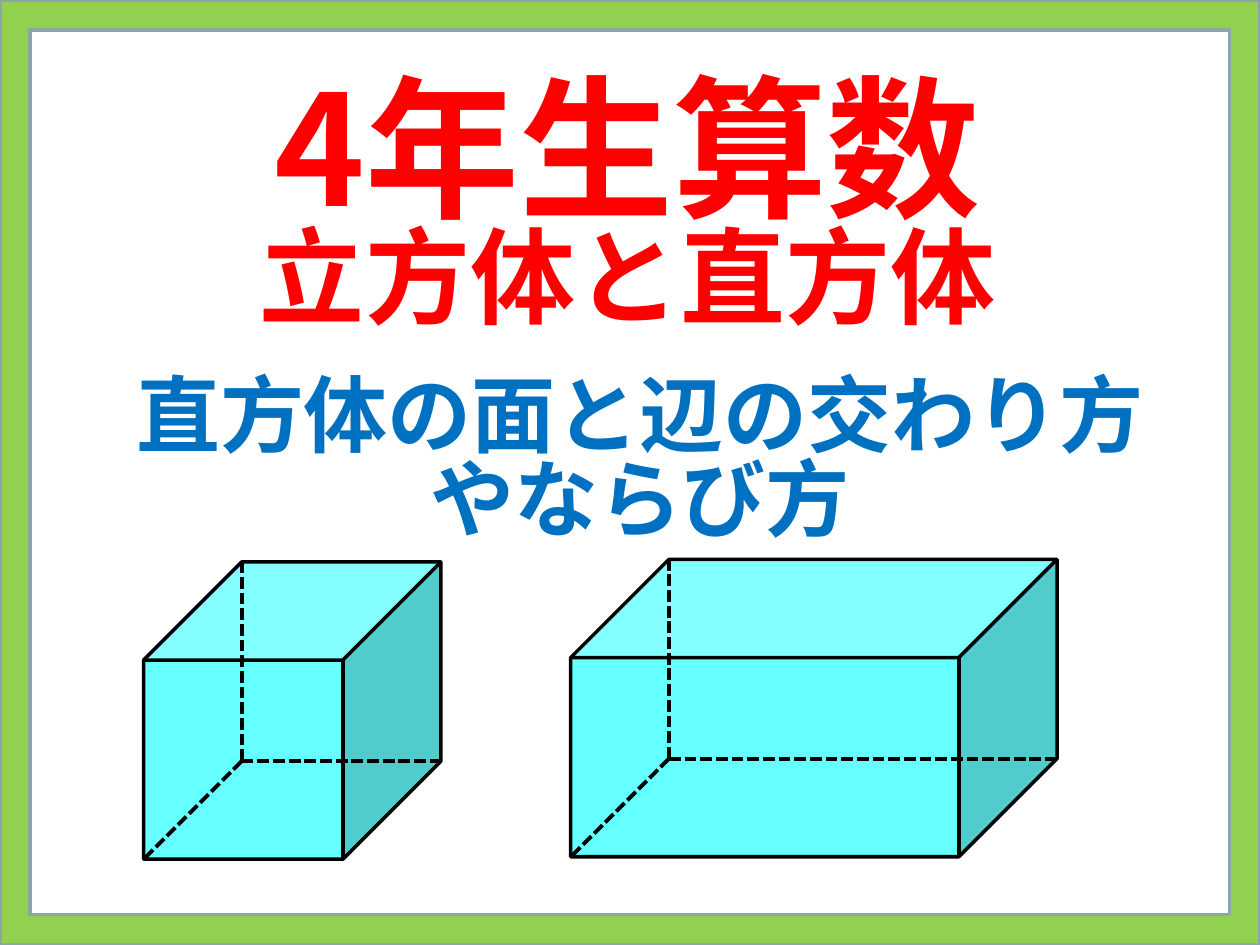
import pptx
import pptx.util
import pptx.dml.color
import pptx.enum.dml
import pptx.enum.shapes
import pptx.enum.text
import pptx.oxml
import pptx.oxml.ns
import lxml.etree

Inches = pptx.util.Inches
FONT = "Noto Sans CJK JP"
CUBE_DEPTH = 0.33


def color(hex_text):
    return pptx.dml.color.RGBColor.from_string(hex_text)


def set_attributes(target, values):
    for name, value in values.items():
        setattr(target, name, value)


def add_preset(page, kind, place, adjustment, fill, line, width):
    shape = page.shapes.add_shape(kind, *map(Inches, place))
    shape.adjustments[0] = adjustment
    shape.shadow.inherit = False
    shape.fill.solid()
    shape.fill.fore_color.rgb = color(fill)
    shape.line.color.rgb = color(line)
    shape.line.width = pptx.util.Pt(width)


def add_dashed_edge(page, start, end):
    edge = page.shapes.add_connector(
        pptx.enum.shapes.MSO_CONNECTOR.STRAIGHT, *map(Inches, start + end)
    )
    edge.line.color.rgb = color("000000")
    edge.line.width = pptx.util.Pt(2.25)
    edge.line.dash_style = pptx.enum.dml.MSO_LINE.SQUARE_DOT
    properties = edge._element.spPr
    lxml.etree.SubElement(properties, pptx.oxml.ns.qn("a:effectLst"))


def add_solid(page, left, top, width, height):
    cube = pptx.enum.shapes.MSO_SHAPE.CUBE
    add_preset(page, cube, (left, top, width, height), CUBE_DEPTH, "66FFFF", "000000", 2)
    depth = CUBE_DEPTH * min(width, height)
    right, bottom = left + width, top + height
    hidden = (left + depth, bottom - depth)
    for end in ((left + depth, top), (right, bottom - depth), (left, bottom)):
        add_dashed_edge(page, hidden, end)


def add_span(para, text, size, hex_text):
    span = para.add_run()
    span.text = text
    set_attributes(span.font, {"name": FONT, "size": pptx.util.Pt(size), "bold": True})
    span.font.color.rgb = color(hex_text)
    properties = span.font._element
    outline = pptx.oxml.parse_xml(
        f'<a:ln {pptx.oxml.ns.nsdecls("a")} w="9525"><a:solidFill>'
        '<a:srgbClr val="FFFFFF"/></a:solidFill></a:ln>'
    )
    properties.insert(0, outline)
    latin = properties.find(pptx.oxml.ns.qn("a:latin"))
    east_asian = pptx.oxml.parse_xml(
        f'<a:ea {pptx.oxml.ns.nsdecls("a")} typeface="{FONT}"/>'
    )
    latin.addnext(east_asian)


def add_text_frame(page, place, top_margin):
    box = page.shapes.add_textbox(*map(Inches, place))
    set_attributes(box.text_frame, {
        "word_wrap": True,
        "vertical_anchor": pptx.enum.text.MSO_ANCHOR.MIDDLE,
        "margin_top": Inches(top_margin),
    })
    return box.text_frame


def format_para(para, spacing):
    set_attributes(para, {
        "alignment": pptx.enum.text.PP_ALIGN.CENTER,
        "line_spacing": spacing,
    })


def add_title(page):
    para = add_text_frame(page, (0.29, 0.32, 9.38, 2.49), 0.29).paragraphs[0]
    format_para(para, 0.8)
    add_span(para, "4年生算数", 88, "FF0000")
    para.add_line_break()
    add_span(para, "立方体と直方体", 60, "FF0000")


def add_subtitle(page):
    frame = add_text_frame(page, (0.58, 3, 9, 1.24), 0.17)
    first, second = frame.paragraphs[0], frame.add_paragraph()
    for para, text in ((first, "直方体の面と辺の交わり方"), (second, "やならび方")):
        format_para(para, 0.83)
        add_span(para, text, 48, "0070C0")


def main():
    deck = pptx.Presentation()
    set_attributes(deck, {"slide_width": Inches(10), "slide_height": Inches(7.5)})
    page = deck.slides.add_slide(deck.slide_layouts[6])
    border = pptx.enum.shapes.MSO_SHAPE.FRAME
    add_preset(page, border, (0, 0, 10, 7.5), 0.032, "92D050", "8AA6A8", 2)
    add_title(page)
    add_subtitle(page)
    add_solid(page, 1.14, 4.46, 2.36, 2.36)
    add_solid(page, 4.53, 4.44, 3.86, 2.36)
    deck.save("out.pptx")


if __name__ == "__main__":
    main()
